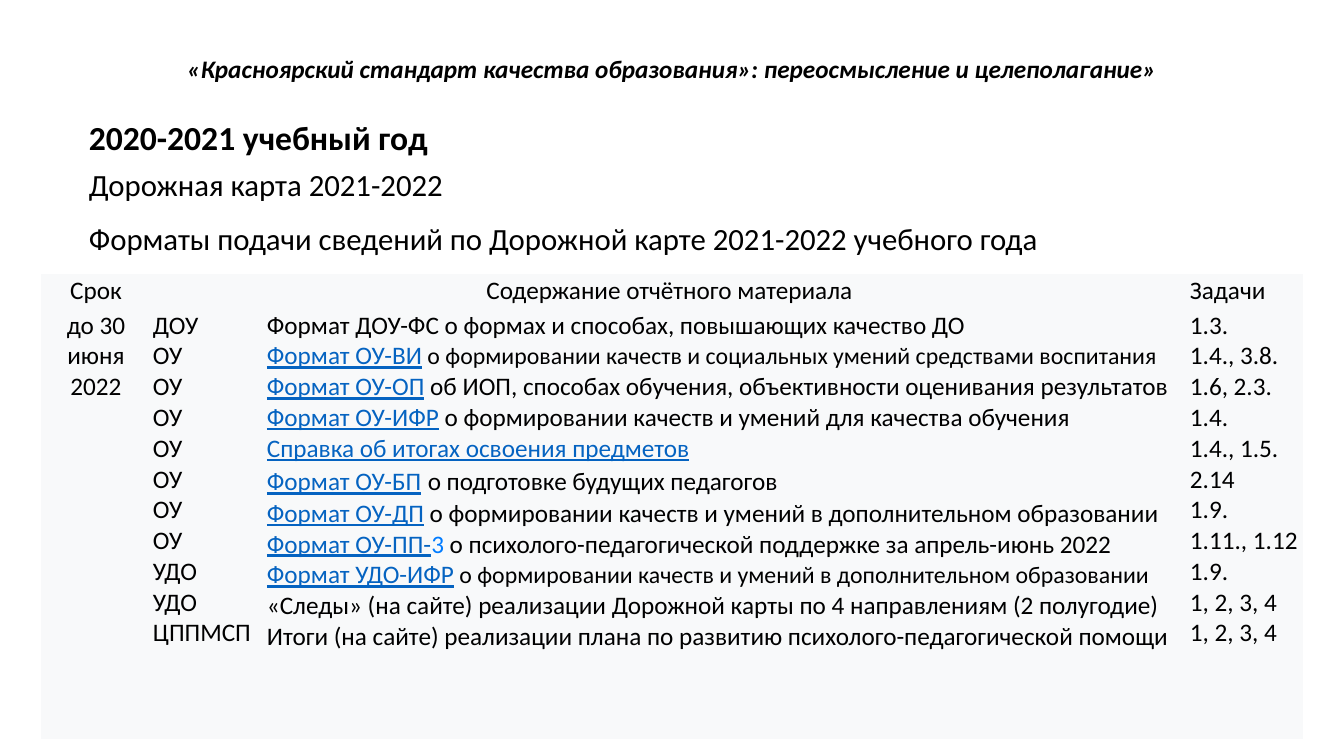
from pptx import Presentation
from pptx.dml.color import RGBColor
from pptx.enum.text import MSO_ANCHOR, PP_ALIGN
from pptx.util import Emu, Pt

CENTER, LEFT = PP_ALIGN.CENTER, PP_ALIGN.LEFT
MIDDLE, TOP = MSO_ANCHOR.MIDDLE, MSO_ANCHOR.TOP
FONT = "Calibri"
NO_STYLE = "{2D5ABB26-0587-4C30-8999-92F81FD0307C}"
COLORS = {"text": "000000", "link": "0563C1", "mark": "007BFF", "cell": "F8F9FA"}

# style: size, colour, underline
STYLES = {
    "text": (18, "text", False),
    "small": (17, "text", False),
    "wide": (20, "text", False),
    "link": (18, "link", True),
    "mark": (18, "mark", False),
}

TITLE = "«Красноярский стандарт качества образования»: переосмысление и целеполагание»"
HEADS = [
    ("2020-2021 учебный год", 24, True),
    ("Дорожная карта 2021-2022", 22, False),
    ("Форматы подачи сведений по Дорожной карте 2021-2022 учебного года", 22, False),
]
REPORTS = [
    ("ДОУ", [("Формат ДОУ-ФС о формах и способах, повышающих качество ДО", "text")], "1.3."),
    ("ОУ", [("Формат ОУ-ВИ", "link"),
            (" о формировании качеств и социальных умений средствами воспитания", "small")],
     "1.4., 3.8."),
    ("ОУ", [("Формат ОУ-ОП", "link"),
            (" об ИОП, способах обучения, объективности оценивания результатов", "text")],
     "1.6, 2.3."),
    ("ОУ", [("Формат ОУ-ИФР", "link"),
            (" о формировании качеств и умений для качества обучения", "text")], "1.4."),
    ("ОУ", [("Справка об итогах освоения предметов", "link")], "1.4., 1.5."),
    ("ОУ", [("Формат ОУ-БП", "link"), (" ", "wide"),
            ("о подготовке будущих педагогов", "text")], "2.14"),
    ("ОУ", [("Формат ОУ-ДП", "link"),
            (" о формировании качеств и умений в дополнительном образовании", "text")], "1.9."),
    ("ОУ", [("Формат ОУ-ПП-", "link"), ("3", "mark"),
            (" о психолого-педагогической поддержке за апрель-июнь 2022", "text")],
     "1.11., 1.12"),
    ("УДО", [("Формат УДО-ИФР", "link"),
             (" о формировании качеств и умений в дополнительном образовании", "small")], "1.9."),
    ("УДО", [("«Следы» (на сайте) реализации Дорожной карты по 4 направлениям (2 полугодие)",
              "text")], "1, 2, 3, 4"),
    ("ЦППМСП", [("Итоги (на сайте) реализации плана по развитию психолого-педагогической помощи",
                 "text")], "1, 2, 3, 4"),
]


def px(n):
    return Emu(round(n * 914400 / 100.8))


def paint(font, size, color="text", bold=False, italic=False, line=False):
    font.name, font.size = FONT, Pt(size)
    font.bold, font.italic, font.underline = bold, italic, line
    font.color.rgb = RGBColor.from_string(COLORS[color])


def add_frame(slide, box, anchor=TOP):
    frame = slide.shapes.add_textbox(*map(px, box)).text_frame
    frame.word_wrap = True
    frame.vertical_anchor = anchor
    return frame


def add_title(slide, box):
    frame = add_frame(slide, box, MIDDLE)
    frame.text = TITLE
    para = frame.paragraphs[0]
    para.alignment, para.line_spacing = CENTER, 0.9
    paint(para.runs[0].font, 18, bold=True, italic=True)


def add_heads(slide, box):
    frame = add_frame(slide, box)
    frame.text = "\n".join(text for text, _, _ in HEADS)
    for i, (para, (_, size, bold)) in enumerate(zip(frame.paragraphs, HEADS)):
        if i:
            para.space_before = para.space_after = Pt(6)
        paint(para.runs[0].font, size, bold=bold)


def fill_cell(cell, lines, align=LEFT, anchor=TOP):
    """Write lines, each a list of (text, style) parts, into a cell."""
    cell.vertical_anchor = anchor
    frame = cell.text_frame
    for i, parts in enumerate(lines):
        para = frame.add_paragraph() if i else frame.paragraphs[0]
        para.alignment = align
        for text, style in parts:
            run = para.add_run()
            run.text = text
            size, color, line = STYLES[style]
            paint(run.font, size, color, line=line)


def add_plan(slide, box):
    cols, rows = (110, 114, 923, 115), (31, 431)
    table = slide.shapes.add_table(len(rows), len(cols), *map(px, box)).table
    table.first_row = table.horz_banding = False
    table._tbl.tblPr[0].text = NO_STYLE
    for col, width in zip(table.columns, cols):
        col.width = px(width)
    for row, height in zip(table.rows, rows):
        row.height = px(height)
    for cell in table.iter_cells():
        cell.fill.solid()
        cell.fill.fore_color.rgb = RGBColor.from_string(COLORS["cell"])
        cell.margin_left = cell.margin_right = px(2)
        cell.margin_top = cell.margin_bottom = px(2)
    table.cell(0, 1).merge(table.cell(0, 2))

    heads = [(0, "Срок", CENTER), (1, "Содержание отчётного материала", CENTER),
             (3, "Задачи", LEFT)]
    for col, text, align in heads:
        fill_cell(table.cell(0, col), [[(text, "text")]], align, MIDDLE)
    fill_cell(table.cell(1, 0), [[("до 30 июня 2022", "text")]], CENTER)
    fill_cell(table.cell(1, 1), [[(who, "text")] for who, _, _ in REPORTS])
    fill_cell(table.cell(1, 2), [parts for _, parts, _ in REPORTS])
    fill_cell(table.cell(1, 3), [[(tasks, "text")] for _, _, tasks in REPORTS])


def main():
    deck = Presentation()
    deck.slide_width, deck.slide_height = px(1344), px(756)
    slide = deck.slides.add_slide(deck.slide_layouts[6])
    add_title(slide, (41, 40, 1262, 60))
    add_heads(slide, (79, 112, 981, 151))
    add_plan(slide, (41, 274, 1262, 462))
    deck.save("out.pptx")


if __name__ == "__main__":
    main()
